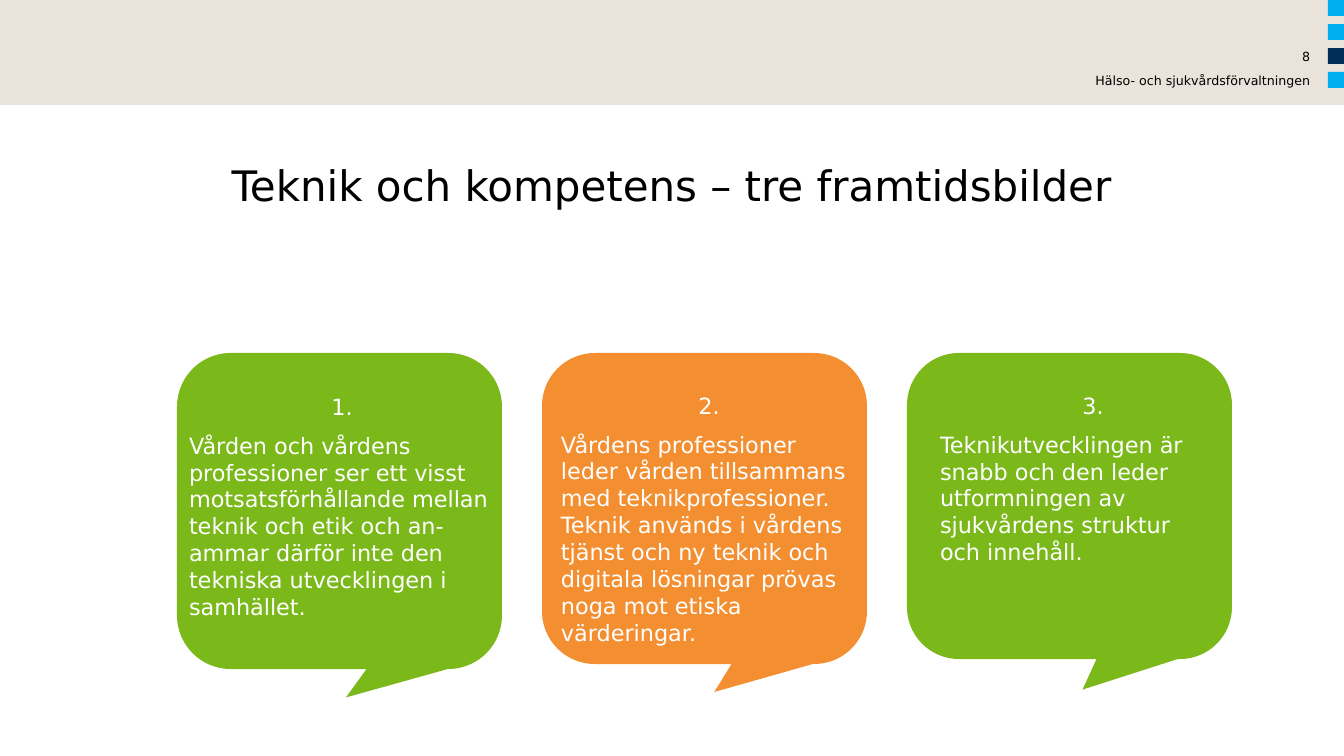
import pptx
import pptx.util
import pptx.dml.color
import pptx.enum.shapes
import pptx.enum.text

SHAPE = pptx.enum.shapes.MSO_SHAPE
ALIGN = pptx.enum.text.PP_ALIGN
SCALE = 914400 / 100.8  # EMU per px

GREEN, ORANGE = "7AB919", "F38F31"
SKY, NAVY, SAND = "00AEEF", "002D5A", "E9E3DC"
WHITE, BLACK = "FFFFFF", "000000"


def px(n):
    return pptx.util.Emu(round(n * SCALE))


def color(code):
    return pptx.dml.color.RGBColor.from_string(code)


class Page:
    font = "DejaVu Sans"

    def __init__(self, deck):
        self.slide = deck.slides.add_slide(deck.slide_layouts[6])

    def shape(self, kind, box, fill, adjust=()):
        item = self.slide.shapes.add_shape(kind, *map(px, box))
        item.shadow.inherit = False
        item.fill.solid()
        item.fill.fore_color.rgb = color(fill)
        item.line.fill.background()
        for i, value in enumerate(adjust):
            item.adjustments[i] = value

    def text(self, box, lines, size, ink, inset=(0, 0), gap=0):
        """Each line is a pair of wording and alignment."""
        frame = self.slide.shapes.add_textbox(*map(px, box)).text_frame
        frame.word_wrap = True
        frame.margin_left = frame.margin_right = px(inset[0])
        frame.margin_top = frame.margin_bottom = px(inset[1])
        for i, (words, align) in enumerate(lines):
            para = frame.add_paragraph() if i else frame.paragraphs[0]
            para.text = words
            para.alignment = align
            if i:
                para.space_before = pptx.util.Pt(gap)
            for run in para.runs:
                run.font.name = self.font
                run.font.size = pptx.util.Pt(size)
                run.font.color.rgb = color(ink)


def main():
    deck = pptx.Presentation()
    deck.slide_width, deck.slide_height = px(1344), px(756)
    page = Page(deck)

    # Top band with the column of squares
    page.shape(SHAPE.RECTANGLE, (0, 0, 1344, 105), SAND)
    for i, fill in enumerate((SKY, SKY, NAVY, SKY)):
        page.shape(SHAPE.RECTANGLE, (1328, 24 * i, 16, 16), fill)

    # Title, department and page number
    page.text((106, 160, 1132, 92),
              [("Teknik och kompetens – tre framtidsbilder", ALIGN.CENTER)],
              30, BLACK)
    for top, words in ((73, "Hälso- och sjukvårdsförvaltningen"), (49, "8")):
        page.text((940, top, 370, 14), [(words, ALIGN.RIGHT)], 9, BLACK)

    # Three callouts: fill, height, tail tip, text box, wording
    visions = (
        (GREEN, 316, (0.02, 0.59), (179, 388, 326, 226),
         "Vården och vårdens professioner ser ett visst motsatsförhållande "
         "mellan teknik och etik och an-ammar därför inte den tekniska "
         "utvecklingen i samhället."),
        (ORANGE, 311, (0.03, 0.59), (551, 387, 316, 272),
         "Vårdens professioner leder vården tillsammans med "
         "teknikprofessioner. Teknik används i vårdens tjänst och ny teknik "
         "och digitala lösningar prövas noga mot etiska värderingar."),
        (GREEN, 306, (0.04, 0.6), (930, 387, 326, 226),
         "Teknikutvecklingen är snabb och den leder utformningen av "
         "sjukvårdens struktur \voch innehåll."),
    )
    for i, (fill, height, tip, box, words) in enumerate(visions):
        page.shape(SHAPE.ROUNDED_RECTANGULAR_CALLOUT,
                   (177 + 365 * i, 353, 325, height), fill, (*tip, 0.17))
        page.text(box, [(f"{i + 1}.", ALIGN.CENTER), (words, ALIGN.LEFT)],
                  16, WHITE, (10, 5), 8.5)

    deck.save("out.pptx")


if __name__ == "__main__":
    main()
